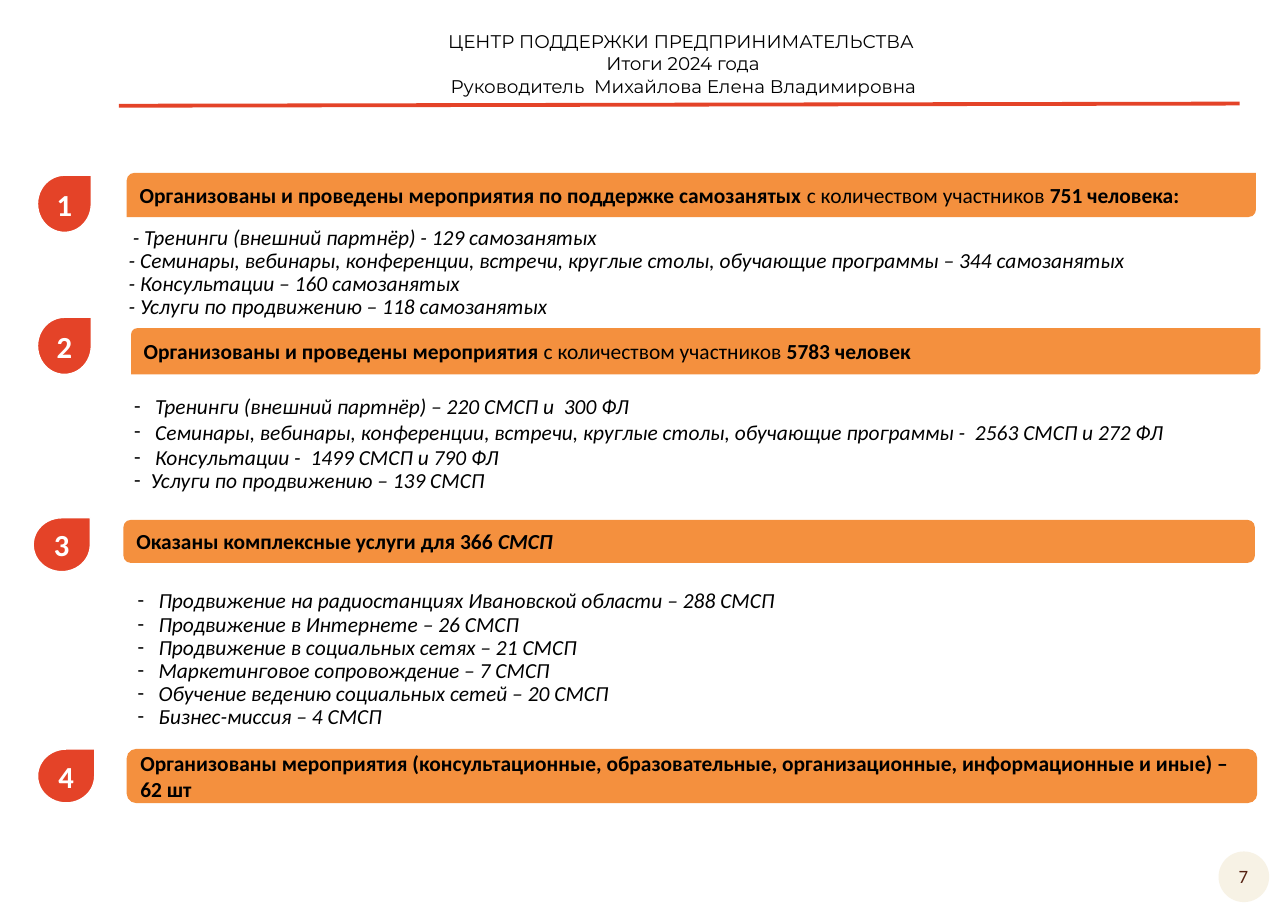
from dataclasses import dataclass
from typing import NamedTuple

from lxml import etree
from pptx import Presentation
from pptx import util as u
from pptx.dml.color import RGBColor
from pptx.enum import shapes, text
from pptx.oxml.ns import qn

SLIDE_W, SLIDE_H = u.Inches(11.69), u.Inches(8.27)
GRID = 100  # the slide is a grid of 100 columns by 100 rows
LEFT, CENTER, JUSTIFY = text.PP_ALIGN.LEFT, text.PP_ALIGN.CENTER, text.PP_ALIGN.JUSTIFY
KIND = shapes.MSO_SHAPE
PADDED = (0.1, 0.05, 0.1, 0.05)
FLUSH = (0, 0, 0, 0)


@dataclass(frozen=True)
class Theme:
    accent: str = "E44328"
    bar: str = "F4903E"
    page_disc: str = "F7F2E5"
    page_ink: str = "562212"
    ink: str = "000000"
    paper: str = "FFFFFF"
    body_font: str = "Calibri"
    head_font: str = "Montserrat"
    body: float = 14
    head: float = 12
    number: float = 20
    page: float = 12.3


THEME = Theme()


class Box(NamedTuple):
    """Left, top, width and height in grid columns and rows."""
    col: float
    row: float
    cols: float
    rows: float


class Run(NamedTuple):
    text: str
    bold: bool = False
    italic: bool = False
    size: float = THEME.body
    color: str = THEME.ink
    font: str = THEME.body_font


class Para(NamedTuple):
    runs: list[Run]
    align: text.PP_ALIGN = LEFT
    margin: float = 0
    hang: float = 0
    bullet: str = ""
    spacing: float = 1
    before: float = 0


class Section(NamedTuple):
    drop: Box
    bar: Box
    kind: shapes.MSO_SHAPE
    adjust: tuple[float, ...]
    title: Para
    list_box: Box | None = None
    items: list[Para] = []


def bold(s: str) -> Run:
    return Run(s, bold=True)


def item(s: str, hang: float = 0, spacing: float = 0.9, align: text.PP_ALIGN = LEFT) -> Para:
    """List line; a hanging indent brings a dash bullet with it."""
    return Para([Run(s, italic=True)], align, hang, hang, "-" if hang else "", spacing)


def header(s: str, margin: float = 0, hang: float = 0, before: float = 0) -> Para:
    run = Run(s, size=THEME.head, font=THEME.head_font)
    return Para([run], CENTER, margin, hang, before=before)


TEACH = "Семинары, вебинары, конференции, встречи, круглые столы, обучающие программы"
DIAGONAL, ROUND = (KIND.ROUND_2_DIAG_RECTANGLE, KIND.ROUNDED_RECTANGLE)

HEADER = [
    header("ЦЕНТР ПОДДЕРЖКИ ПРЕДПРИНИМАТЕЛЬСТВА ", 1.38, 1.37, 0.8),
    header("Итоги 2024 года"),
    header("Руководитель  Михайлова Елена Владимировна", 1.38, 1.37, 0.8),
]

SECTIONS = [
    Section(
        Box(2.91, 19.23, 4.19, 6.29), Box(9.84, 18.98, 87.68, 4.84), DIAGONAL, (0.17, 0),
        Para([bold("Организованы и проведены мероприятия по поддержке самозанятых "),
              Run("с количеством участников "), bold("751 человека:")], JUSTIFY),
        Box(9.15, 24.3, 86.66, 14.03),
        [Para([Run(" ", italic=True, size=THEME.head),
               Run("- Тренинги (внешний партнёр) - 129 самозанятых", italic=True)], spacing=0.9),
         item(f"- {TEACH} – 344 самозанятых"),
         item("- Консультации – 160 самозанятых"),
         item("- Услуги по продвижению – 118 самозанятых")]),
    Section(
        Box(2.91, 34.82, 4.19, 6.29), Box(10.18, 36.03, 87.68, 5.08), DIAGONAL, (0.13, 0),
        Para([bold("Организованы и проведены мероприятия "),
              Run("с количеством участников "), bold("5783 человек")], JUSTIFY),
        Box(9.58, 42.56, 85.8, 17.78),
        [*(item(s, 0.19, 1, JUSTIFY) for s in (
            "Тренинги (внешний партнёр) – 220 СМСП и  300 ФЛ",
            f"{TEACH} -  2563 СМСП и 272 ФЛ ",
            "Консультации -  1499 СМСП и 790 ФЛ")),
         item("Услуги по продвижению – 139 СМСП", 0.15)]),
    Section(
        Box(2.57, 56.83, 4.45, 5.93), Box(9.58, 57.07, 87.85, 4.72), ROUND, (0.17,),
        Para([bold("Оказаны комплексные услуги для 366 "), Run("СМСП", True, True)]),
        Box(9.84, 64.21, 87.77, 16.57),
        [item(s, 0.19) for s in (
            "Продвижение на радиостанциях Ивановской области – 288 СМСП",
            "Продвижение в Интернете – 26 СМСП",
            "Продвижение в социальных сетях – 21 СМСП",
            "Маркетинговое сопровождение – 7 СМСП",
            "Обучение ведению социальных сетей – 20 СМСП",
            "Бизнес-миссия – 4 СМСП")]),
    Section(
        Box(2.91, 82.22, 4.45, 5.93), Box(9.84, 82.22, 87.77, 5.93), ROUND, (0.17,),
        Para([bold("Организованы мероприятия (консультационные, образовательные, "
                   "организационные, информационные и иные) –  62 шт")])),
]


def x(col: float) -> int:
    return round(SLIDE_W * col / GRID)


def y(row: float) -> int:
    return round(SLIDE_H * row / GRID)


def place(box: Box) -> tuple[int, int, int, int]:
    return x(box.col), y(box.row), x(box.cols), y(box.rows)


def write(tf, paras: list[Para], insets: tuple[float, ...]) -> None:
    tf.word_wrap = True
    tf.margin_left, tf.margin_top, tf.margin_right, tf.margin_bottom = map(u.Inches, insets)
    for i, para in enumerate(paras):
        p = tf.add_paragraph() if i else tf.paragraphs[0]
        p.alignment, p.line_spacing, p.space_before = para.align, para.spacing, u.Pt(para.before)
        pPr = p._p.get_or_add_pPr()
        if para.hang:
            pPr.set("marL", str(u.Inches(para.margin)))
            pPr.set("indent", str(-u.Inches(para.hang)))
        if para.bullet:
            etree.SubElement(pPr, qn("a:buFont")).set("typeface", THEME.body_font)
            etree.SubElement(pPr, qn("a:buChar")).set("char", para.bullet)
        for run in para.runs:
            r = p.add_run()
            r.text = run.text
            r.font.name, r.font.size = run.font, u.Pt(run.size)
            r.font.bold, r.font.italic = run.bold, run.italic
            r.font.color.rgb = RGBColor.from_string(run.color)


def add_text(s, box: Box, paras: list[Para], insets: tuple[float, ...] = PADDED) -> None:
    write(s.shapes.add_textbox(*place(box)).text_frame, paras, insets)


def add_shape(s, kind: shapes.MSO_SHAPE, box: Box, fill: str, adjust: tuple[float, ...] = (),
              outline: str = ""):
    sp = s.shapes.add_shape(kind, *place(box))
    sp.shadow.inherit = False
    for i, value in enumerate(adjust):
        sp.adjustments[i] = value
    sp.fill.solid()
    sp.fill.fore_color.rgb = RGBColor.from_string(fill)
    if outline:
        sp.line.color.rgb = RGBColor.from_string(outline)
        sp.line.width = u.Pt(1)
    else:
        sp.line.fill.background()
    sp.text_frame.vertical_anchor = text.MSO_ANCHOR.MIDDLE
    return sp


def add_rule(s) -> None:
    line = s.shapes.add_connector(shapes.MSO_CONNECTOR.STRAIGHT,
                                  x(9.24), y(11.61), x(96.24), y(11.37))
    line.line.color.rgb = RGBColor.from_string(THEME.accent)
    line.line.width = u.Pt(2.5)
    etree.SubElement(line._element.spPr, qn("a:effectLst"))


def add_section(s, number: int, section: Section) -> None:
    bar = add_shape(s, section.kind, section.bar, THEME.bar, section.adjust)
    write(bar.text_frame, [section.title], PADDED)
    drop = add_shape(s, KIND.TEAR, section.drop, THEME.accent, (1,), THEME.paper)
    label = Run(str(number), bold=True, size=THEME.number, color=THEME.paper)
    write(drop.text_frame, [Para([label], CENTER)], FLUSH)
    if section.list_box:
        add_text(s, section.list_box, section.items)


def main() -> None:
    prs = Presentation()
    prs.slide_width, prs.slide_height = SLIDE_W, SLIDE_H
    s = prs.slides.add_slide(prs.slide_layouts[6])
    add_shape(s, KIND.OVAL, Box(94.61, 93.47, 3.93, 5.56), THEME.page_disc)
    page = Run("7", size=THEME.page, color=THEME.page_ink)
    add_text(s, Box(94.35, 94.32, 4.36, 3.75), [Para([page], CENTER)])
    add_text(s, Box(9.84, 3.14, 86.4, 7.62), HEADER, (0, 0.01, 0, 0))
    add_rule(s)
    for number, section in enumerate(SECTIONS, 1):
        add_section(s, number, section)
    prs.save("out.pptx")


if __name__ == "__main__":
    main()
